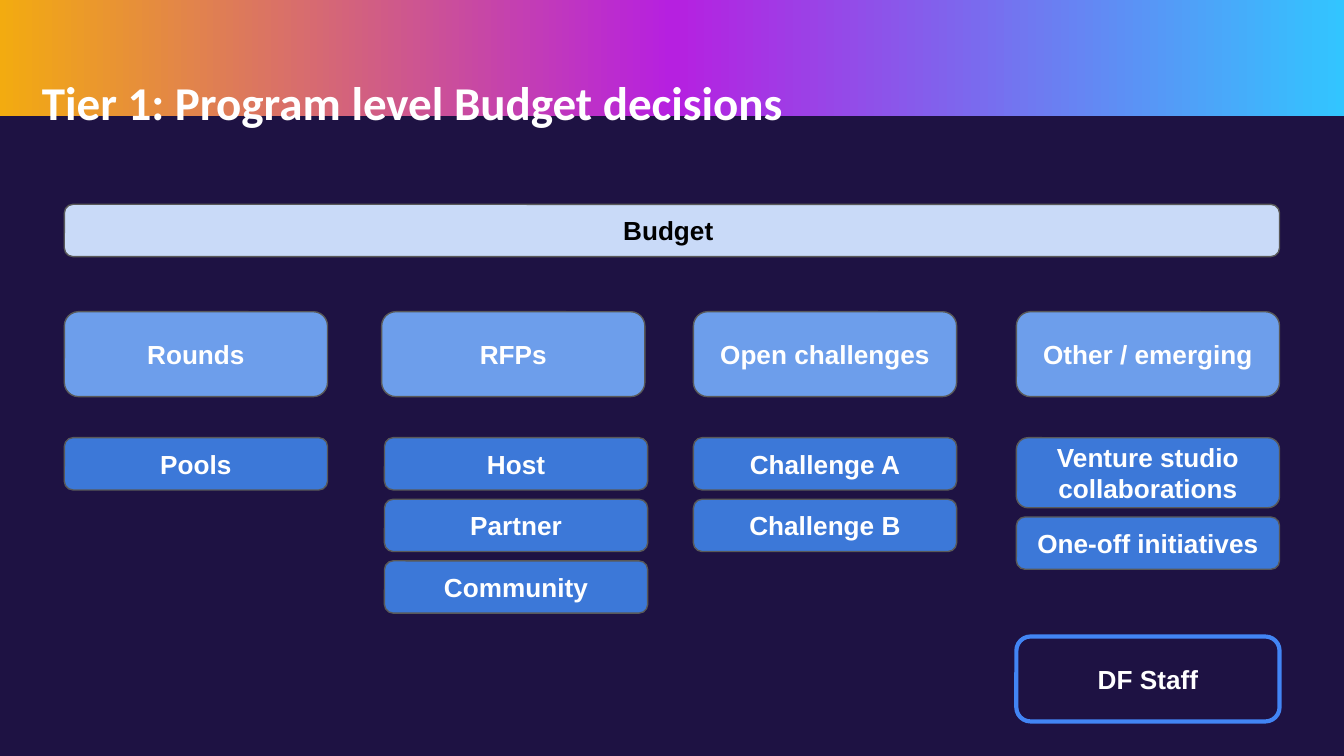
import copy
import dataclasses
import typing

import pptx
import pptx.dml.color
import pptx.enum.shapes
import pptx.enum.text
import pptx.oxml.ns
import pptx.util

Pt = pptx.util.Pt
RGB = pptx.dml.color.RGBColor
KIND = pptx.enum.shapes.MSO_SHAPE

NIGHT = RGB(0x1E, 0x12, 0x43)
AMBER = RGB(0xF3, 0xAB, 0x10)
PURPLE = RGB(0xB6, 0x20, 0xE0)
CYAN = RGB(0x32, 0xC5, 0xFF)
PALE = RGB(0xC9, 0xDA, 0xF8)
LIGHT = RGB(0x6D, 0x9E, 0xEB)
BLUE = RGB(0x3C, 0x78, 0xD8)
BRIGHT = RGB(0x42, 0x85, 0xF4)
GREY = RGB(0x59, 0x59, 0x59)
WHITE = RGB(0xFF, 0xFF, 0xFF)
BLACK = RGB(0, 0, 0)

LEFT, WIDE = 34.5, 141
HIGH, LOW, GAP = 45.5, 28, 5
HEAD_TOP, ITEM_TOP = 167, 234.5
INSET = 7.2

FRAME = {
    "word_wrap": True,
    "margin_left": Pt(INSET),
    "margin_right": Pt(INSET),
    "margin_top": Pt(INSET),
    "margin_bottom": Pt(INSET),
}
LABEL = {"name": "Arial", "size": Pt(14), "bold": True}
TITLE = {"name": "Calibri", "size": Pt(25.2), "bold": True}


@dataclasses.dataclass
class Box:
    text: str
    left: float
    top: float
    width: float = WIDE
    height: float = LOW
    fill: typing.Optional[RGB] = BLUE
    ink: RGB = WHITE
    edge: RGB = GREY
    line: float = 0.75


@dataclasses.dataclass
class Column:
    head: str
    left: float
    items: dict[str, float]
    shift: float = 0


COLUMNS = [
    Column("Rounds", LEFT, {"Pools": LOW}),
    Column("RFPs", 204.5, {"Host": LOW, "Partner": LOW, "Community": LOW}, 1.5),
    Column("Open challenges", 371.5, {"Challenge A": LOW, "Challenge B": LOW}),
    Column("Other / emerging", 544.5,
           {"Venture studio collaborations": 37.5, "One-off initiatives": LOW}),
]


def style(thing: typing.Any, values: dict) -> None:
    for name, value in values.items():
        setattr(thing, name, value)


def write(shape: typing.Any, text: str, form: dict, ink: RGB) -> typing.Any:
    style(shape.text_frame, FRAME)
    para = shape.text_frame.paragraphs[0]
    run = para.add_run()
    run.text = text
    style(run.font, form)
    run.font.color.rgb = ink
    return para


def draw_box(slide: typing.Any, box: Box) -> None:
    shape = slide.shapes.add_shape(
        KIND.ROUNDED_RECTANGLE,
        Pt(box.left), Pt(box.top), Pt(box.width), Pt(box.height))
    shape.shadow.inherit = False
    if box.fill is None:
        shape.fill.background()
    else:
        shape.fill.solid()
        shape.fill.fore_color.rgb = box.fill
    shape.line.color.rgb = box.edge
    shape.line.width = Pt(box.line)
    para = write(shape, box.text, LABEL, box.ink)
    para.alignment = pptx.enum.text.PP_ALIGN.CENTER
    shape.text_frame.vertical_anchor = pptx.enum.text.MSO_ANCHOR.MIDDLE


def draw_column(slide: typing.Any, col: Column) -> None:
    draw_box(slide, Box(col.head, col.left, HEAD_TOP, height=HIGH, fill=LIGHT))
    top = ITEM_TOP
    for text, height in col.items.items():
        draw_box(slide, Box(text, col.left + col.shift, top, height=height))
        top += height + GAP


def draw_band(slide: typing.Any) -> None:
    band = slide.shapes.add_shape(KIND.RECTANGLE, 0, 0, Pt(720), Pt(62))
    band.shadow.inherit = False
    band.line.fill.background()
    band.fill.gradient()
    band.fill.gradient_angle = 0
    stops = next(band._element.iter(pptx.oxml.ns.qn("a:gsLst")))
    stops.append(copy.deepcopy(stops[0]))
    for rank, color in enumerate((AMBER, PURPLE, CYAN)):
        stop = band.fill.gradient_stops[rank]
        stop.position = rank / 2
        stop.color.rgb = color


def main() -> None:
    deck = pptx.Presentation()
    style(deck, {"slide_width": Pt(720), "slide_height": Pt(405)})
    slide = deck.slides.add_slide(deck.slide_layouts[6])
    slide.background.fill.solid()
    slide.background.fill.fore_color.rgb = NIGHT

    draw_band(slide)
    title = slide.shapes.add_textbox(Pt(15.3), Pt(17.3), Pt(671), Pt(45))
    para = write(title, "Tier 1: Program level Budget decisions", TITLE, WHITE)
    para.line_spacing = 1.5

    last = COLUMNS[-1].left
    draw_box(slide, Box("Budget ", LEFT, 109.5, last + WIDE - LEFT,
                        fill=PALE, ink=BLACK))
    for col in COLUMNS:
        draw_column(slide, col)
    draw_box(slide, Box("DF Staff", last, 341, height=HIGH, fill=None,
                        edge=BRIGHT, line=2.25))
    deck.save("out.pptx")


if __name__ == "__main__":
    main()
